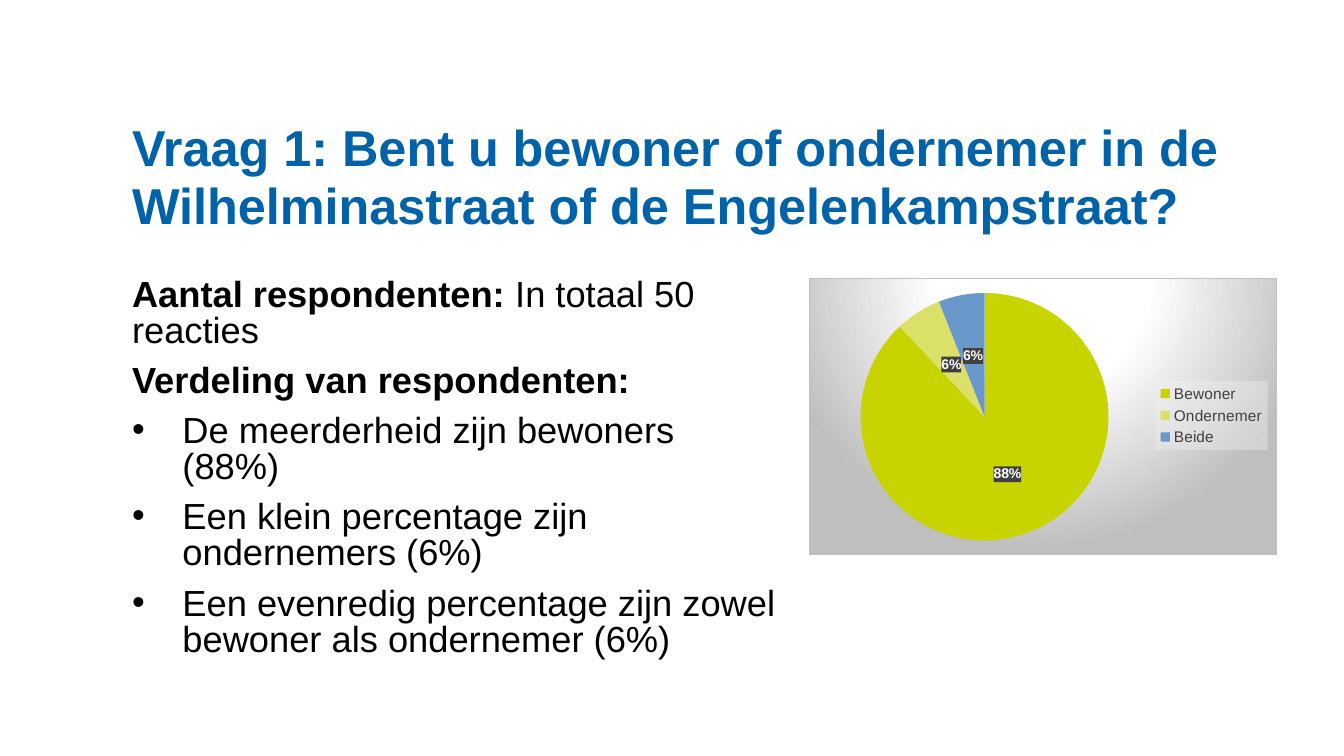
from lxml import etree
from pptx import Presentation
from pptx.chart.data import CategoryChartData
from pptx.dml.color import RGBColor
from pptx.enum.chart import XL_CHART_TYPE, XL_LABEL_POSITION, XL_LEGEND_POSITION
from pptx.enum.text import MSO_ANCHOR, MSO_AUTO_SIZE, PP_ALIGN
from pptx.oxml import parse_xml
from pptx.oxml.ns import nsdecls, qn
from pptx.util import Inches, Pt

# Content: a paragraph is (bullet, [(text, bold), ...])
TITLE = [(False, [("Vraag 1: Bent u bewoner of ondernemer in de "
                   "Wilhelminastraat of de Engelenkampstraat?", True)])]
BODY = [
    (False, [("Aantal respondenten: ", True), ("In totaal 50 reacties", False)]),
    (False, [("Verdeling van respondenten:", True)]),
    (True, [("De meerderheid zijn bewoners (88%)", False)]),
    (True, [("Een klein percentage zijn ondernemers (6%)", False)]),
    (True, [("Een evenredig percentage zijn zowel bewoner als ondernemer (6%)", False)]),
]
SHARES = [("Bewoner", 88, "lime"), ("Ondernemer", 6, "pale"), ("Beide", 6, "blue")]
COLORS = {"title": "0062A8", "text": "000000", "white": "FFFFFF", "gray": "BFBFBF",
          "dark": "404040", "light": "F2F2F2",
          "lime": "C8D400", "pale": "DBE069", "blue": "6B98CB"}
FONT = "Arial"
LEFT = 1.31
TOP = 2.76


def style(font, size, color, bold=False):
    font.name, font.size, font.bold = FONT, Pt(size), bold
    font.color.rgb = RGBColor.from_string(COLORS[color])


def write(shape, paras, size, color, line):
    frame = shape.text_frame
    frame.word_wrap = True
    frame.auto_size = MSO_AUTO_SIZE.NONE
    frame.vertical_anchor = MSO_ANCHOR.TOP
    frame.margin_left = frame.margin_right = frame.margin_top = frame.margin_bottom = 0
    for i, (bullet, runs) in enumerate(paras):
        para = frame.paragraphs[0] if i == 0 else frame.add_paragraph()
        para.alignment = PP_ALIGN.LEFT
        para.line_spacing = line
        para.space_before = Pt(10 if i else 0)
        if bullet:
            props = para._p.get_or_add_pPr()
            props.set("marL", str(Inches(0.5)))
            props.set("indent", str(-Inches(0.5)))
            etree.SubElement(props, qn("a:buFont")).set("typeface", FONT)
            etree.SubElement(props, qn("a:buChar")).set("char", "•")
        for text, bold in runs:
            run = para.add_run()
            run.text = text
            style(run.font, size, color, bold)


def solid(color, alpha):
    return (f'<a:solidFill><a:srgbClr val="{COLORS[color]}">'
            f'<a:alpha val="{alpha * 1000}"/></a:srgbClr></a:solidFill>')


def paint(part, inner):
    """Give a chart part its fill, just ahead of its text format."""
    props = parse_xml(f'<c:spPr {nsdecls("c", "a")}>{inner}</c:spPr>')
    part.find(qn("c:txPr")).addprevious(props)


def layout(x, y, w, h, inner=False):
    target = '<c:layoutTarget val="inner"/>' if inner else ""
    modes = '<c:xMode val="edge"/><c:yMode val="edge"/>'
    sizes = "".join(f'<c:{k} val="{v}"/>' for k, v in zip("xywh", (x, y, w, h)))
    return parse_xml(f'<c:layout {nsdecls("c")}><c:manualLayout>{target}{modes}{sizes}'
                     '</c:manualLayout></c:layout>')


deck = Presentation()
deck.slide_width, deck.slide_height = Inches(13.33), Inches(7.5)
slide = deck.slides.add_slide(deck.slide_layouts[5])

# Title and findings
title = slide.shapes.title
title.left, title.top = Inches(LEFT), Inches(1.2)
title.width, title.height = Inches(11.5), Inches(1.33)
write(title, TITLE, size=36, color="title", line=0.95)
body = slide.shapes.add_textbox(Inches(LEFT), Inches(TOP), Inches(6.43), Inches(4.06))
write(body, BODY, size=25.9, color="text", line=0.83)

# Pie chart
data = CategoryChartData()
data.categories = [name for name, _, _ in SHARES]
data.add_series("Series 1", [value for _, value, _ in SHARES])
chart = slide.shapes.add_chart(XL_CHART_TYPE.PIE, Inches(8.02), Inches(TOP),
                               Inches(4.65), Inches(2.75), data).chart
chart.has_title = False
style(chart.font, 10, "text")
plot = chart.plots[0]
plot.vary_by_categories = True
for i, (_, _, color) in enumerate(SHARES):
    fill = plot.series[0].points[i].format.fill
    fill.solid()
    fill.fore_color.rgb = RGBColor.from_string(COLORS[color])

# Slice labels
labels = plot.series[0].data_labels
labels.show_value, labels.show_percentage = False, True
labels.number_format, labels.number_format_is_linked = "0%", False
labels.position = XL_LABEL_POSITION.CENTER
style(labels.font, 10, "white", bold=True)
paint(labels._element, solid("dark", 90))

# Legend
chart.has_legend = True
legend = chart.legend
legend.position = XL_LEGEND_POSITION.RIGHT
legend.include_in_layout = False
style(legend.font, 11, "dark")
paint(legend._element, solid("light", 39))

# Places inside the chart
for part in (legend._element, plot._element.getparent()):
    for old in part.findall(qn("c:layout")):
        part.remove(old)
legend._element.find(qn("c:legendPos")).addnext(layout(0.74, 0.37, 0.24, 0.25))
plot._element.getparent().insert(0, layout(0.11, 0.05, 0.53, 0.9, inner=True))

# Chart background
stops = "".join(f'<a:gs pos="{pos * 1000}"><a:srgbClr val="{COLORS[color]}"/></a:gs>'
                for pos, color in ((0, "white"), (39, "white"), (100, "gray")))
paint(chart._chartSpace,
      f'<a:gradFill><a:gsLst>{stops}</a:gsLst><a:path path="circle">'
      '<a:fillToRect l="50000" t="-80000" r="50000" b="180000"/></a:path></a:gradFill>'
      f'<a:ln w="{Pt(0.75)}"><a:solidFill><a:srgbClr val="{COLORS["gray"]}"/>'
      '</a:solidFill></a:ln>')

deck.save("out.pptx")
